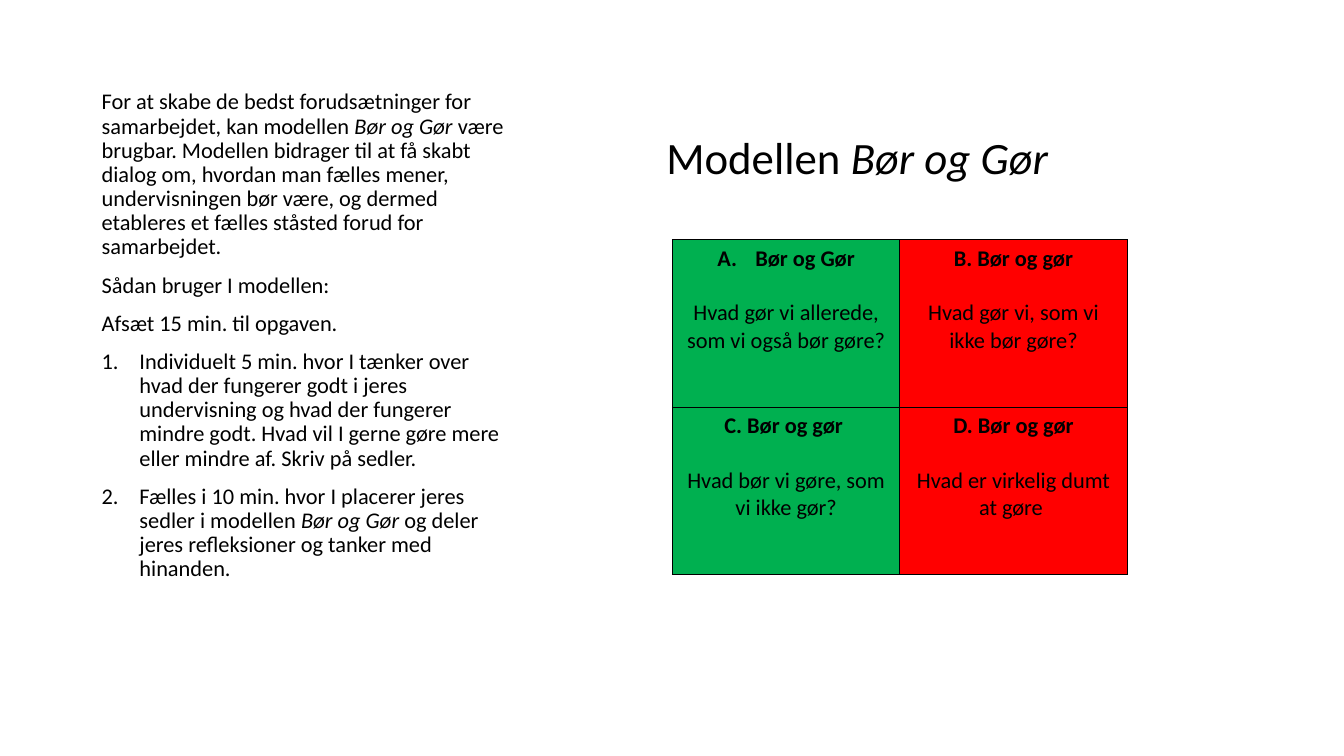
from lxml.etree import SubElement
from pptx import Presentation
from pptx.dml.color import RGBColor
from pptx.enum.text import MSO_ANCHOR, PP_ALIGN
from pptx.oxml.ns import qn
from pptx.util import Inches, Pt


def color(hex_string):
    return RGBColor.from_string(hex_string)


def write(frame, runs, size=16, align=PP_ALIGN.LEFT, spacing=None, before=0, numbering=None):
    """Add a paragraph of (text, style) runs, where style is "", "b" or "i"."""
    paragraph = frame.paragraphs[0]
    if paragraph.runs:
        paragraph = frame.add_paragraph()
    paragraph.alignment = align
    paragraph.line_spacing = spacing
    paragraph.space_before = Pt(before)
    if numbering:
        properties = paragraph._p.get_or_add_pPr()
        properties.set("marL", str(Inches(0.375)))
        properties.set("indent", str(Inches(-0.375)))
        SubElement(properties, qn("a:buAutoNum"), type=numbering)
    for text, style in runs:
        run = paragraph.add_run()
        run.text = text
        run.font.name = "Calibri"
        run.font.size = Pt(size)
        run.font.color.rgb = color("000000")
        run.font.bold = style == "b"
        run.font.italic = style == "i"


presentation = Presentation()
presentation.slide_width = Inches(13.33)
presentation.slide_height = Inches(7.5)
slide = presentation.slides.add_slide(presentation.slide_layouts[6])

# Title
title = slide.shapes.add_textbox(Inches(6.51), Inches(0.13), Inches(5.65), Inches(1.75)).text_frame
title.word_wrap = True
title.vertical_anchor = MSO_ANCHOR.BOTTOM
write(title, [("Modellen ", ""), ("Bør og Gør", "i")], size=32, spacing=0.9)

# Instructions
instructions = slide.shapes.add_textbox(Inches(0.91), Inches(0.85), Inches(4.3), Inches(5.77)).text_frame
instructions.word_wrap = True
steps = [
    (None, [
        ("For at skabe de bedst forudsætninger for samarbejdet, kan modellen ", ""),
        ("Bør og Gør ", "i"),
        ("være brugbar. Modellen bidrager til at få skabt dialog om, hvordan man fælles mener, "
         "undervisningen bør være, og dermed etableres et fælles ståsted forud for samarbejdet.", ""),
    ]),
    (None, [("Sådan bruger I modellen:", "")]),
    (None, [("Afsæt 15 min. til opgaven.", "")]),
    ("arabicPeriod", [
        ("Individuelt 5 min. hvor I tænker over hvad der fungerer godt i jeres undervisning og hvad "
         "der fungerer mindre godt. Hvad vil I gerne gøre mere eller mindre af. Skriv på sedler.", ""),
    ]),
    ("arabicPeriod", [
        ("Fælles i 10 min. hvor I placerer jeres sedler i modellen ", ""),
        ("Bør og Gør", "i"),
        (" og deler jeres refleksioner og tanker med hinanden.", ""),
    ]),
]
for numbering, runs in steps:
    write(instructions, runs, spacing=0.9, before=10, numbering=numbering)

# Two-by-two model
model = slide.shapes.add_table(2, 2, Inches(6.67), Inches(2.38), Inches(4.51), Inches(3.32)).table
model.first_row = False
model.horz_banding = False
column_fills = ["00B050", "FF0000"]
quadrants = [
    [("Bør og Gør", "Hvad gør vi allerede, som vi også bør gøre?", "alphaUcPeriod"),
     ("B. Bør og gør", "Hvad gør vi, som vi ikke bør gøre?", None)],
    [("C. Bør og gør ", "Hvad bør vi gøre, som vi ikke gør?", None),
     ("D. Bør og gør", "Hvad er virkelig dumt at gøre ", None)],
]
for row_index, row in enumerate(quadrants):
    for column_index, (heading, question, numbering) in enumerate(row):
        cell = model.cell(row_index, column_index)
        write(cell.text_frame, [(heading, "b")], align=PP_ALIGN.CENTER, numbering=numbering)
        write(cell.text_frame, [(question, "")], align=PP_ALIGN.CENTER, before=19.5)
        # Borders come before the fill in the cell properties
        cell_properties = cell._tc.get_or_add_tcPr()
        for side in ("a:lnL", "a:lnR", "a:lnT", "a:lnB"):
            border = SubElement(cell_properties, qn(side), w=str(Pt(1)))
            border_fill = SubElement(border, qn("a:solidFill"))
            SubElement(border_fill, qn("a:srgbClr"), val="000000")
        cell.fill.solid()
        cell.fill.fore_color.rgb = color(column_fills[column_index])

presentation.save("out.pptx")
